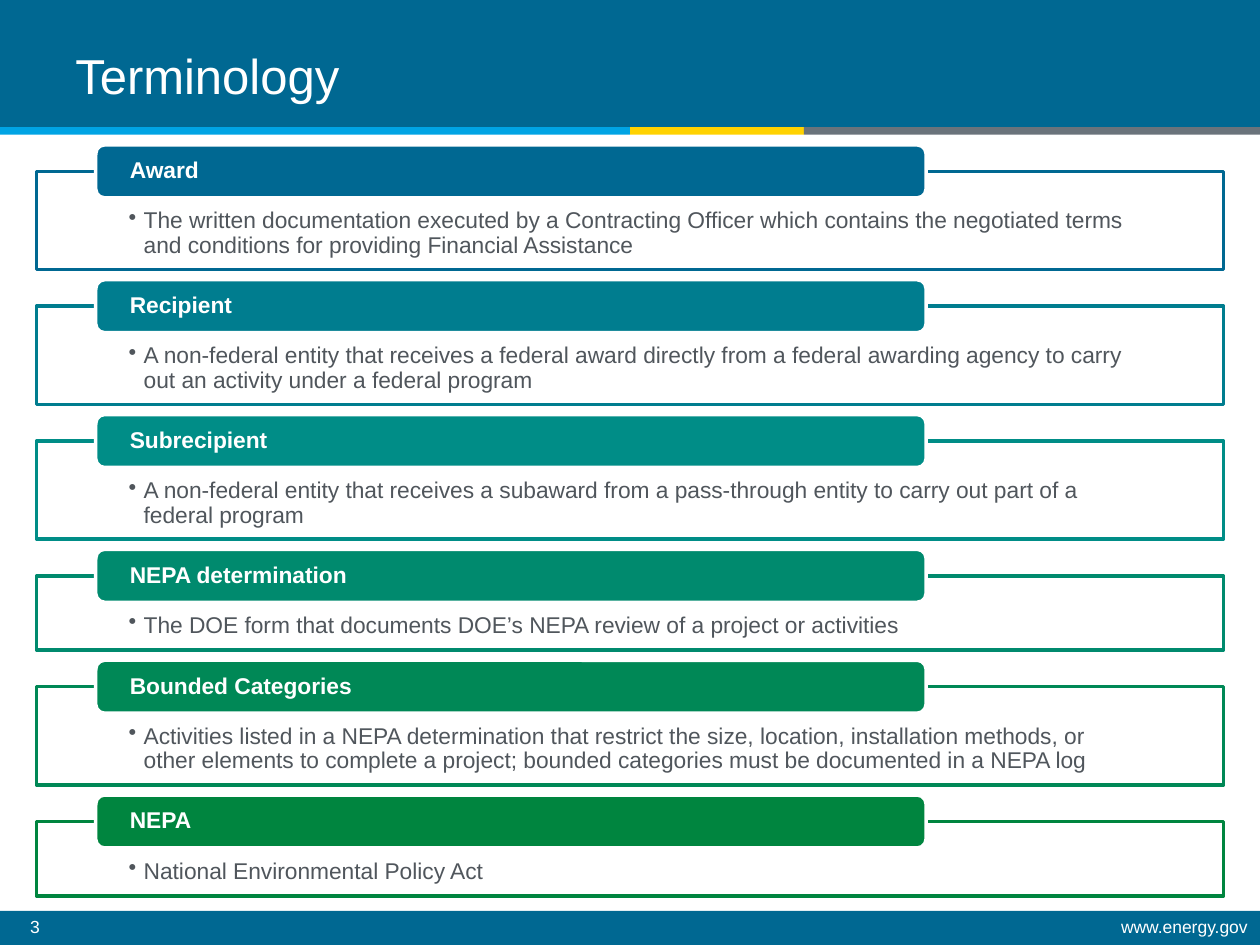
from lxml.etree import SubElement
from pptx import Presentation
from pptx.dml.color import RGBColor
from pptx.enum.shapes import MSO_SHAPE
from pptx.enum.text import MSO_ANCHOR, PP_ALIGN
from pptx.oxml.ns import qn
from pptx.util import Inches, Pt

W, H = 10, 7.5
FONT = "Arial"
COLORS = {"blue": "006892", "sky": "00A4E4", "yellow": "FFD200", "gray": "6A737B",
          "white": "FFFFFF", "text": "50565C"}

TITLE = "Terminology"
PAGE, SITE = "3", "www.energy.gov"
STRIPE = [("sky", 5), ("yellow", 1.38), ("gray", 3.62)]

# term, colour, lines of text, definition
TERMS = [
    ("Award", "006892", 2,
     "The written documentation executed by a Contracting Officer which contains "
     "the negotiated terms and conditions for providing Financial Assistance"),
    ("Recipient", "007D8F", 2,
     "A non-federal entity that receives a federal award directly from a federal "
     "awarding agency to carry out an activity under a federal program"),
    ("Subrecipient", "008D87", 2,
     "A non-federal entity that receives a subaward from a pass-through entity "
     "to carry out part of a federal program"),
    ("NEPA determination", "008A6E", 1,
     "The DOE form that documents DOE’s NEPA review of a project or activities"),
    ("Bounded Categories", "008856", 2,
     "Activities listed in a NEPA determination that restrict the size, location, "
     "installation methods, or other elements to complete a project; bounded "
     "categories must be documented in a NEPA log"),
    ("NEPA", "00853F", 1, "National Environmental Policy Act"),
]

BAND_H, STRIPE_H, FOOTER_Y = 1.01, 0.06, 7.23
BOX_X, BOX_Y, BOX_W, GAP = 0.29, 1.36, 9.42, 0.29
BOX_PAD, LINE_H = 0.4, 0.19
TAB_X, TAB_W, TAB_H = 0.76, 6.59, 0.42


def add_box(s, x, y, w, h, fill, line=None, kind=MSO_SHAPE.RECTANGLE):
    sp = s.shapes.add_shape(kind, Inches(x), Inches(y), Inches(w), Inches(h))
    sp.shadow.inherit = False
    sp.fill.solid()
    sp.fill.fore_color.rgb = RGBColor.from_string(fill)
    if line:
        sp.line.color.rgb = RGBColor.from_string(line)
        sp.line.width = Pt(2)
    else:
        sp.line.fill.background()
    return sp


def add_label(s, x, y, w, h):
    return s.shapes.add_textbox(Inches(x), Inches(y), Inches(w), Inches(h))


def write(sp, text, size, color, bold=False, spacing=0.9, align=PP_ALIGN.LEFT,
          anchor=MSO_ANCHOR.TOP, insets=(0.1, 0.05, 0.1, 0.05), bullet=False):
    tf = sp.text_frame
    tf.word_wrap = True
    tf.vertical_anchor = anchor
    tf.margin_left, tf.margin_top, tf.margin_right, tf.margin_bottom = map(Inches, insets)
    p = tf.paragraphs[0]
    p.alignment = align
    p.line_spacing = spacing
    if bullet:
        pPr = p._p.get_or_add_pPr()
        pPr.set("marL", str(Inches(0.12)))
        pPr.set("indent", str(-Inches(0.12)))
        SubElement(pPr, qn("a:buChar")).set("char", "•")
    r = p.add_run()
    r.text = text
    r.font.name, r.font.size, r.font.bold = FONT, Pt(size), bold
    r.font.color.rgb = RGBColor.from_string(color)


def add_frame(s):
    """Draw the title band, the colour stripe and the footer."""
    white = COLORS["white"]
    add_box(s, 0, 0, W, BAND_H, COLORS["blue"])
    add_box(s, 0, FOOTER_Y, W, H - FOOTER_Y, COLORS["blue"])
    x = 0
    for name, w in STRIPE:
        add_box(s, x, BAND_H, w, STRIPE_H, COLORS[name])
        x += w
    write(add_label(s, 0.14, 7.24, 5, 0.26), PAGE, 10, white)
    write(add_label(s, 6, 7.24, 4, 0.26), SITE, 10, white, align=PP_ALIGN.RIGHT)
    write(add_label(s, 0.5, 0.01, 7.42, 1.25), TITLE, 28, white,
          spacing=Pt(28), anchor=MSO_ANCHOR.MIDDLE)


def add_terms(s):
    y = BOX_Y
    for term, color, lines, definition in TERMS:
        h = BOX_PAD + LINE_H * lines
        box = add_box(s, BOX_X, y, BOX_W, h, COLORS["white"], color)
        write(box, definition, 13, COLORS["text"],
              insets=(0.73, 0.3, 0.73, 0.1), bullet=True)
        tab = add_box(s, TAB_X, y - TAB_H / 2, TAB_W, TAB_H, color,
                      COLORS["white"], MSO_SHAPE.ROUNDED_RECTANGLE)
        write(tab, term, 13, COLORS["white"], bold=True,
              anchor=MSO_ANCHOR.MIDDLE, insets=(0.25, 0, 0.25, 0))
        y += h + GAP


def main():
    prs = Presentation()
    prs.slide_width, prs.slide_height = Inches(W), Inches(H)
    s = prs.slides.add_slide(prs.slide_layouts[6])
    add_frame(s)
    add_terms(s)
    prs.save("out.pptx")


if __name__ == "__main__":
    main()
